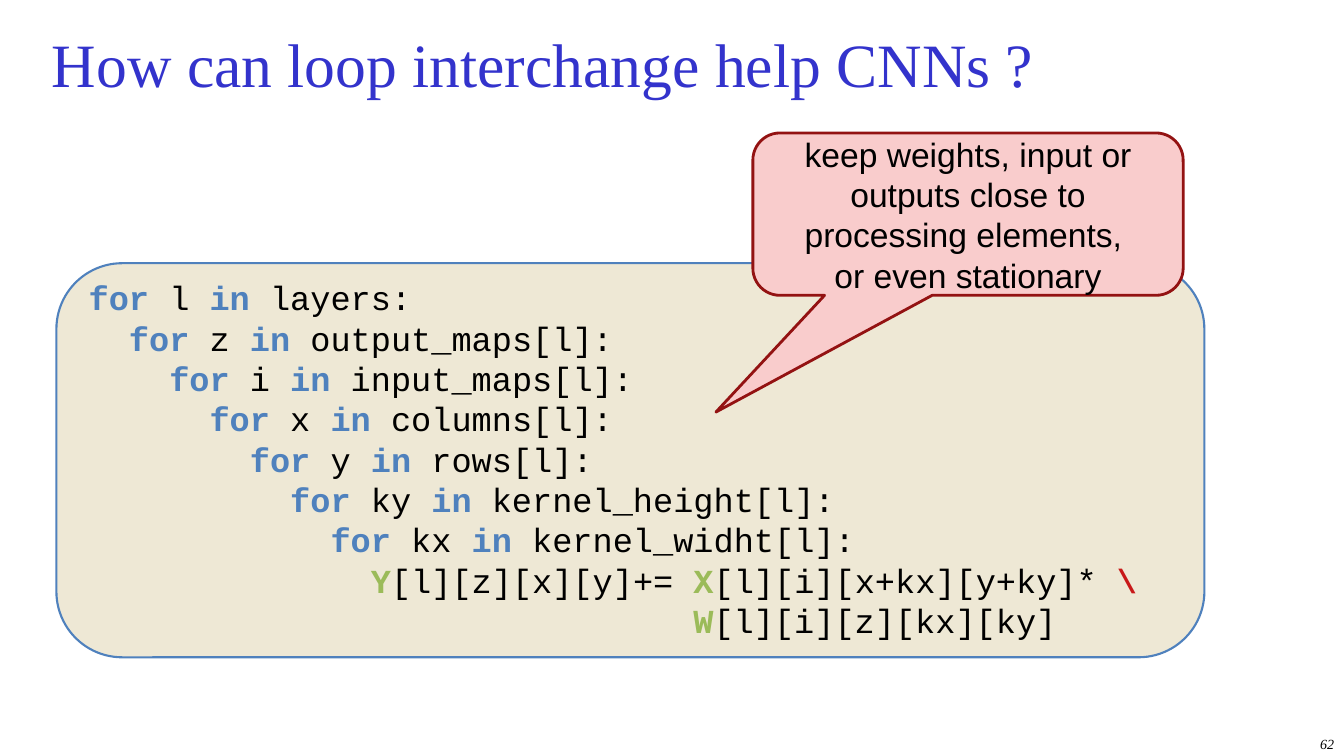
from pptx import Presentation
from pptx.dml.color import RGBColor
from pptx.enum import shapes, text
from pptx.util import Pt

COLORS = {
    "title": "3333CC", "text": "000000", "keyword": "4F81BD",
    "array": "9BBB59", "continuation": "C81919", "panel": "EEE8D5",
    "callout": "F9CCCC", "callout_line": "931212",
}
CODE_SIZE = 24
CHAR_WIDTH = 0.6 * CODE_SIZE  # advance of one Courier New character

LOOPS = [
    ("l", "layers"), ("z", "output_maps[l]"), ("i", "input_maps[l]"),
    ("x", "columns[l]"), ("y", "rows[l]"), ("ky", "kernel_height[l]"),
    ("kx", "kernel_widht[l]"),
]
# Innermost statement: indent in characters, then (text, colour) runs
STATEMENT = [
    (14, [("Y", "array"), ("[l][z][x][y]+= ", "text"), ("X", "array"),
          ("[l][i][x+kx][y+ky]* ", "text"), ("\\", "continuation")]),
    (30, [("W", "array"), ("[l][i][z][kx][ky]", "text")]),
]


def rgb(name):
    return RGBColor.from_string(COLORS[name])


def style(r, font, size, color):
    r.font.name, r.font.size = font, Pt(size)
    r.font.color.rgb = rgb(color)


def set_frame(tf, insets, anchor):
    tf.word_wrap = True
    tf.vertical_anchor = anchor
    tf.margin_left = tf.margin_right = Pt(insets[0])
    tf.margin_top = tf.margin_bottom = Pt(insets[1])


def add_label(s, box, words, size, color, align, anchor, italic=False):
    tf = s.shapes.add_textbox(*map(Pt, box)).text_frame
    set_frame(tf, (7.2, 3.6), anchor)
    p = tf.paragraphs[0]
    p.text, p.alignment = words, align
    style(p.runs[0], "Times New Roman", size, color)
    p.runs[0].font.italic = italic


def add_panel(s, kind, box, adjustments, fill, line, width):
    sp = s.shapes.add_shape(kind, *map(Pt, box))
    sp.shadow.inherit = False
    for i, value in enumerate(adjustments):
        sp.adjustments[i] = value
    sp.fill.solid()
    sp.fill.fore_color.rgb = rgb(fill)
    sp.line.color.rgb = rgb(line)
    sp.line.width = Pt(width)
    return sp


def add_code(s, box):
    x, y, w, h = box
    add_panel(s, shapes.MSO_SHAPE.ROUNDED_RECTANGLE, box, [0.167],
              "panel", "keyword", 1.5)
    tf = s.shapes.add_textbox(Pt(x + 23), Pt(y + 10), Pt(w - 40),
                              Pt(h - 29)).text_frame
    set_frame(tf, (0, 0), text.MSO_ANCHOR.TOP)

    # Each loop sits two characters deeper than the one around it
    lines = [(2 * depth, [("for", "keyword"), (f" {var} ", "text"),
                          ("in", "keyword"), (f" {values}:", "text")])
             for depth, (var, values) in enumerate(LOOPS)]
    for n, (indent, runs) in enumerate(lines + STATEMENT):
        p = tf.add_paragraph() if n else tf.paragraphs[0]
        p._p.get_or_add_pPr().set("marL", str(Pt(indent * CHAR_WIDTH)))
        for words, color in runs:
            r = p.add_run()
            r.text = words
            style(r, "Courier New", CODE_SIZE, color)
            r.font.bold = color != "text"


def add_callout(s, box):
    sp = add_panel(s, shapes.MSO_SHAPE.ROUNDED_RECTANGULAR_CALLOUT, box,
                   [-0.586, 1.219, 0.167], "callout", "callout_line", 2)
    tf = sp.text_frame
    set_frame(tf, (9.4, 5), text.MSO_ANCHOR.MIDDLE)
    p = tf.paragraphs[0]
    p.text = ("keep weights, input or outputs close to processing elements, "
              "\vor even stationary")
    p.alignment = text.PP_ALIGN.CENTER
    for r in p.runs:
        style(r, "Arial", 24, "text")


def main():
    prs = Presentation()
    prs.slide_width, prs.slide_height = Pt(960), Pt(540)
    s = prs.slides.add_slide(prs.slide_layouts[6])

    # Code panel and the remark pointing into it
    add_code(s, (40.3, 188, 820, 281.5))
    add_callout(s, (537.8, 95, 307.4, 116))

    # Title and page number
    add_label(s, (30, 18, 902, 54), "How can loop interchange help CNNs ?", 44,
              "title", text.PP_ALIGN.LEFT, text.MSO_ANCHOR.MIDDLE)
    add_label(s, (760, 522, 200, 18), "62", 10, "text",
              text.PP_ALIGN.RIGHT, text.MSO_ANCHOR.TOP, italic=True)
    prs.save("out.pptx")


if __name__ == "__main__":
    main()
